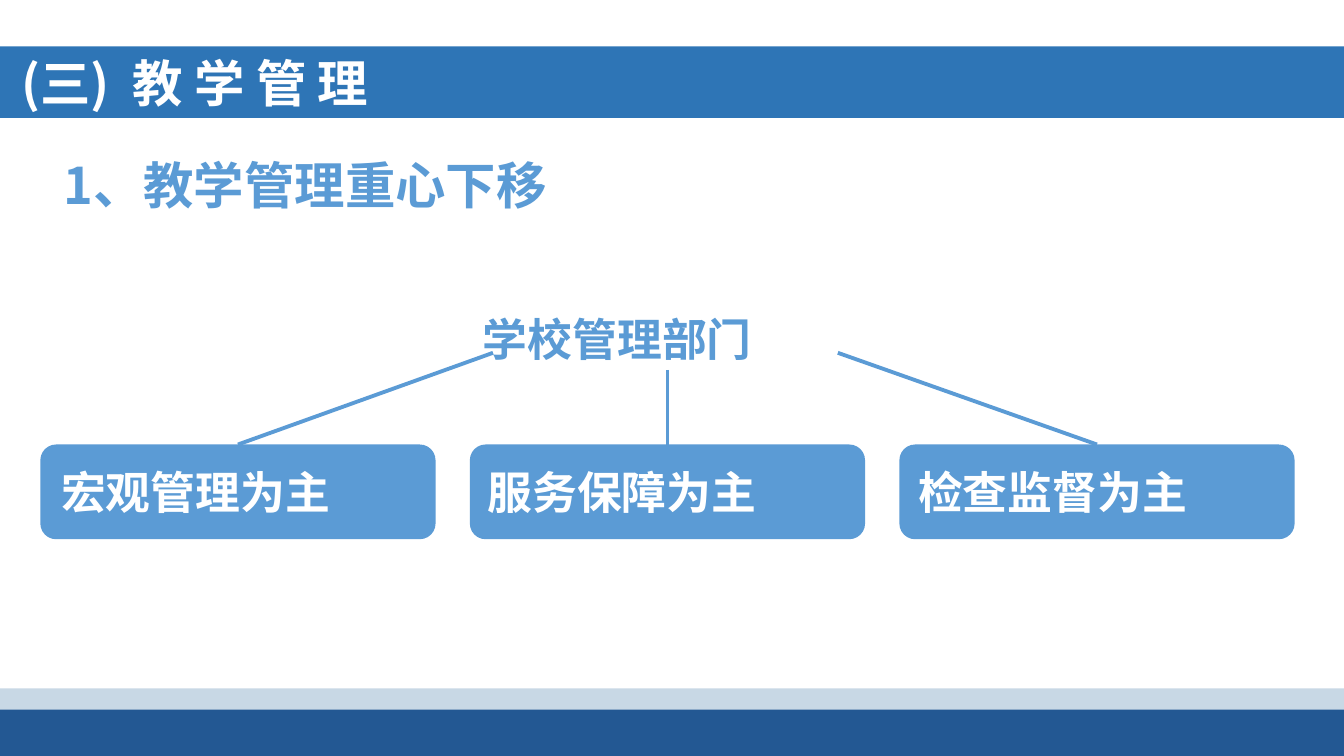
from pptx import Presentation
from pptx.dml.color import RGBColor
from pptx.enum.shapes import MSO_CONNECTOR, MSO_SHAPE
from pptx.enum.text import MSO_ANCHOR, MSO_AUTO_SIZE, PP_ALIGN
from pptx.oxml.ns import qn
from pptx.util import Inches, Pt
from lxml import etree

RECTANGLE = MSO_SHAPE.RECTANGLE
ROUNDED = MSO_SHAPE.ROUNDED_RECTANGLE
STRAIGHT = MSO_CONNECTOR.STRAIGHT
MIDDLE, TOP = MSO_ANCHOR.MIDDLE, MSO_ANCHOR.TOP
LEFT = PP_ALIGN.LEFT
NO_AUTOFIT = MSO_AUTO_SIZE.NONE

FONT = "Noto Sans CJK SC"
WHITE, BLUE, BAND_BLUE = "FFFFFF", "5B9BD5", "2E75B6"
FOOTER_LIGHT, FOOTER_DARK = "C8D8E5", "235893"
SLIDE_WIDTH = 13.33
DUTY_LEFT, DUTY_TOP, DUTY_WIDTH, DUTY_HEIGHT, DUTY_STEP = 0.4, 4.41, 3.92, 0.94, 4.26
DUTIES = [
    ("宏观管理为主", 0.16, (4.89, 3.5)),
    ("服务保障为主", 0.13, (6.62, 3.67)),
    ("检查监督为主", 0.14, (8.31, 3.5)),
]


def rgb(color):
    """Turn a hex string into a colour."""
    return RGBColor.from_string(color)


def format_text(frame, size, color, anchor, inset=0.1):
    """Lay out a text frame and give all its runs one bold style."""
    frame.word_wrap = True
    frame.auto_size = NO_AUTOFIT
    frame.vertical_anchor = anchor
    frame.margin_left = Inches(inset)
    if anchor == MIDDLE:
        frame.margin_top = frame.margin_bottom = 0
    for paragraph in frame.paragraphs:
        paragraph.alignment = LEFT
        for run in paragraph.runs:
            run.font.size = Pt(size)
            run.font.bold = True
            run.font.color.rgb = rgb(color)
            run.font.name = FONT
            east_asian = etree.SubElement(run.font._element, qn("a:ea"))
            east_asian.set("typeface", FONT)


def add_title(slide, parts):
    """Make the title placeholder a full-width band with a widened gap."""
    title = slide.shapes.title
    title.left, title.top = 0, Inches(0.46)
    title.width, title.height = Inches(SLIDE_WIDTH), Inches(0.71)
    title.fill.solid()
    title.fill.fore_color.rgb = rgb(BAND_BLUE)
    number, name = parts
    paragraph = title.text_frame.paragraphs[0]
    for text in (number, " ", name):
        paragraph.add_run().text = text
    format_text(title.text_frame, 36, WHITE, MIDDLE, 0.21)
    paragraph.runs[1].font._element.set("spc", "800")


def add_block(slide, kind, left, top, width, height, color):
    """Add a filled shape without outline or shadow."""
    block = slide.shapes.add_shape(
        kind, Inches(left), Inches(top), Inches(width), Inches(height))
    block.shadow.inherit = False
    block.fill.solid()
    block.fill.fore_color.rgb = rgb(color)
    block.line.fill.background()
    return block


def add_label(slide, text, left, top, width, height, size):
    """Add a blue text box and return its text frame."""
    frame = slide.shapes.add_textbox(
        Inches(left), Inches(top), Inches(width), Inches(height)).text_frame
    frame.text = text
    format_text(frame, size, BLUE, TOP)
    return frame


def add_branch(slide, start, duty):
    """Join a point below the department to the top of a duty box."""
    x, y = (Inches(value) for value in start)
    branch = slide.shapes.add_connector(STRAIGHT, x, y, x, y)
    branch.end_connect(duty, 0)
    branch.line.color.rgb = rgb(BLUE)
    branch.line.width = Pt(2.75)
    etree.SubElement(branch._element.spPr, qn("a:effectLst"))


def main():
    """Build and save the slide."""
    presentation = Presentation()
    presentation.slide_width = Inches(SLIDE_WIDTH)
    presentation.slide_height = Inches(7.5)
    slide = presentation.slides.add_slide(presentation.slide_layouts[5])

    add_block(slide, RECTANGLE, 0, 6.83, SLIDE_WIDTH, 0.55, FOOTER_LIGHT)
    add_block(slide, RECTANGLE, 0, 7.04, SLIDE_WIDTH, 0.46, FOOTER_DARK)
    add_title(slide, ("(三)", "教 学 管 理"))
    add_label(slide, "1、教学管理重心下移", 0.53, 1.48, 5.01, 0.71, 36)
    department = add_label(slide, "学校管理部门", 4.69, 2.78, 4.03, 0.91, 32)
    department.paragraphs[0].line_spacing = 1.5

    for index, (text, inset, branch_start) in enumerate(DUTIES):
        duty = add_block(slide, ROUNDED, DUTY_LEFT + index * DUTY_STEP, DUTY_TOP,
                         DUTY_WIDTH, DUTY_HEIGHT, BLUE)
        duty.text_frame.text = text
        format_text(duty.text_frame, 32, WHITE, MIDDLE, inset)
        add_branch(slide, branch_start, duty)

    presentation.save("out.pptx")


if __name__ == "__main__":
    main()
